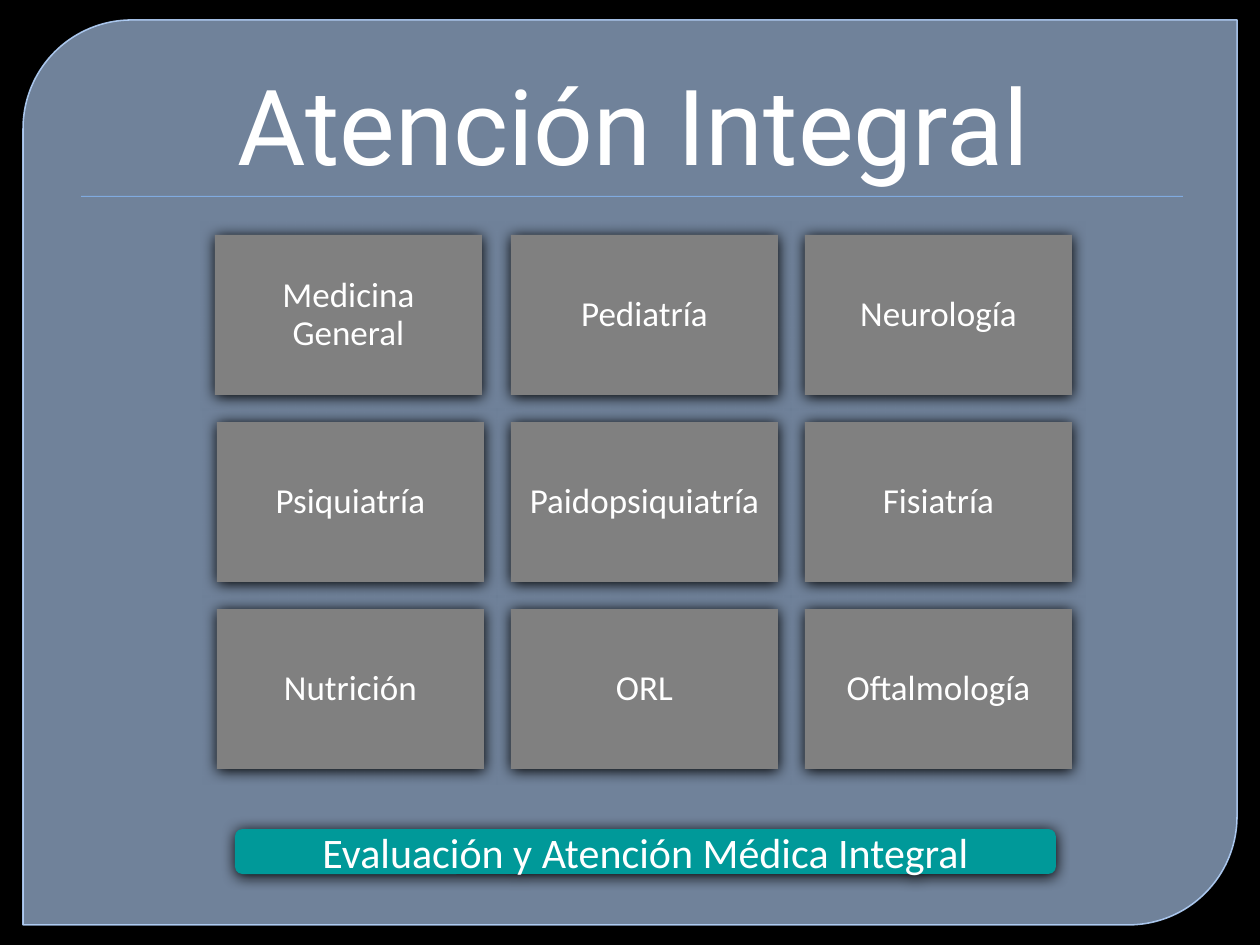
from lxml.etree import SubElement
from pptx import Presentation
from pptx.dml.color import RGBColor
from pptx.enum.shapes import MSO_SHAPE
from pptx.enum.text import MSO_ANCHOR, MSO_AUTO_SIZE, PP_ALIGN
from pptx.oxml.ns import qn
from pptx.util import Emu, Pt

# Content
TITLE = "Atención Integral"
SPECIALTIES = [
    ["Medicina General", "Pediatría", "Neurología"],
    ["Psiquiatría", "Paidopsiquiatría", "Fisiatría"],
    ["Nutrición", "ORL", "Oftalmología"],
]
SUMMARY = "Evaluación y Atención Médica Integral"

COLORS = {
    "background": "000000",
    "panel": "ADC9EE",
    "panel_line": "B7D6FF",
    "rule": "80AADF",
    "card": "808080",
    "summary": "009999",
    "text": "FFFFFF",
    "shadow": "000000",
}

# Layout in px, 126 to the inch
GRID_LEFT, GRID_TOP = 217, 235
CARD_WIDTH, CARD_HEIGHT = 267, 160
COLUMN_STEP, ROW_STEP = 294, 187
FIRST_CARD_SHIFT = -2
CARD_INSET = 10


def px(length):
    return Emu(round(length * 914400 / 126))


def color(name):
    return RGBColor.from_string(COLORS[name])


def set_alpha(fill_parent, percent):
    rgb = fill_parent.find(qn("a:solidFill")).find(qn("a:srgbClr"))
    SubElement(rgb, qn("a:alpha"), val=str(percent * 1000))


def add_box(slide, preset, bounds, fill):
    box = slide.shapes.add_shape(preset, *map(px, bounds))
    box.fill.solid()
    box.fill.fore_color.rgb = color(fill)
    box.line.fill.background()
    box.shadow.inherit = False
    return box


def add_shadow(box, blur, opacity):
    effects = box._element.spPr.find(qn("a:effectLst"))
    shadow = SubElement(effects, qn("a:outerShdw"), blurRad=str(Pt(blur)),
                        dist=str(Pt(1)), dir="5400000", rotWithShape="0")
    rgb = SubElement(shadow, qn("a:srgbClr"), val=COLORS["shadow"])
    SubElement(rgb, qn("a:alpha"), val=str(opacity * 1000))


def write(box, text, font_name, size, anchor=MSO_ANCHOR.MIDDLE):
    frame = box.text_frame
    frame.text = text
    frame.word_wrap = True
    frame.auto_size = MSO_AUTO_SIZE.NONE
    frame.vertical_anchor = anchor
    para = frame.paragraphs[0]
    para.alignment = PP_ALIGN.CENTER
    para.font.name = font_name
    para.font.size = Pt(size)
    para.font.color.rgb = color("text")
    return para


def main():
    deck = Presentation()
    deck.slide_width, deck.slide_height = px(1260), px(945)
    slide = deck.slides.add_slide(deck.slide_layouts[5])
    slide.background.fill.solid()
    slide.background.fill.fore_color.rgb = color("background")

    # Panel and rule, kept behind the title
    panel = add_box(slide, MSO_SHAPE.ROUND_2_DIAG_RECTANGLE,
                    (23, 20, 1214, 905), "panel")
    panel.adjustments[0], panel.adjustments[1] = 0.12, 0
    set_alpha(panel._element.spPr, 65)
    panel.line.color.rgb = color("panel_line")
    panel.line.width = Pt(0.87)
    set_alpha(panel._element.spPr.find(qn("a:ln")), 88)
    rule = add_box(slide, MSO_SHAPE.RECTANGLE, (81, 196, 1102, 1), "rule")
    add_shadow(rule, 1, 75)

    # Title
    title = slide.shapes.title
    title.left, title.top, title.width, title.height = map(px, (63, 35, 1134, 158))
    para = write(title, TITLE, "Roboto", 60, MSO_ANCHOR.BOTTOM)
    para._p.get_or_add_pPr().set("marL", str(px(7)))
    slide.shapes._spTree.append(title._element)

    # Specialty cards
    for row, names in enumerate(SPECIALTIES):
        for column, name in enumerate(names):
            left = GRID_LEFT + column * COLUMN_STEP
            if row == column == 0:
                left += FIRST_CARD_SHIFT
            card = add_box(slide, MSO_SHAPE.RECTANGLE,
                           (left, GRID_TOP + row * ROW_STEP, CARD_WIDTH, CARD_HEIGHT),
                           "card")
            add_shadow(card, 8.5, 100)
            frame = card.text_frame
            frame.margin_left = frame.margin_right = px(CARD_INSET)
            frame.margin_top = frame.margin_bottom = px(CARD_INSET)
            write(card, name, "Calibri", 20).line_spacing = 0.9

    # Summary bar
    summary = add_box(slide, MSO_SHAPE.ROUNDED_RECTANGLE, (235, 829, 821, 45), "summary")
    add_shadow(summary, 8.5, 100)
    write(summary, SUMMARY, "Calibri", 24)

    deck.save("out.pptx")


if __name__ == "__main__":
    main()
